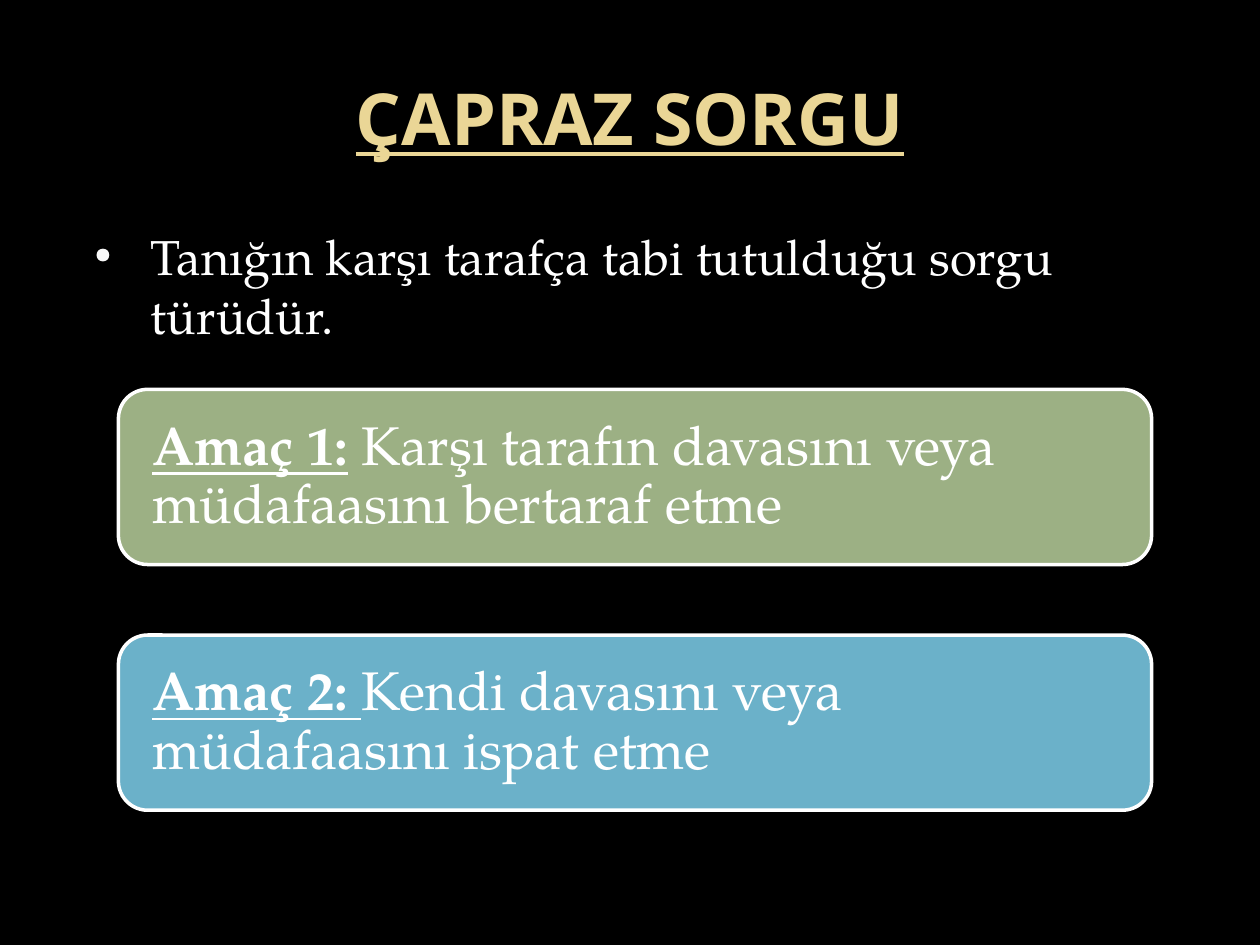
from lxml.etree import SubElement
from pptx import Presentation
from pptx.dml.color import RGBColor
from pptx.enum.shapes import MSO_SHAPE
from pptx.enum.text import MSO_ANCHOR, PP_ALIGN
from pptx.oxml.ns import qn
from pptx.util import Inches, Pt

W, H = 10, 7.5
SERIF = "TeX Gyre Pagella"
TITLE = [("ÇAPRAZ SORGU", dict(name="Noto Sans", size=Pt(41), bold=True, underline=True), "EAD696")]
BODY = [("Tanığın karşı tarafça tabi tutulduğu sorgu türüdür.", dict(name=SERIF, size=Pt(28)), "FFFFFF")]
PLAIN = dict(name=SERIF, size=Pt(31))
LABEL = dict(PLAIN, bold=True, underline=True)
AIMS = [
    ("9CB084", "Amaç 1:", " Karşı tarafın davasını veya müdafaasını bertaraf etme"),
    ("6BB1C9", "Amaç 2: ", "Kendi davasını veya müdafaasını ispat etme"),
]
MARGIN = 0.05 * W
CARD = dict(left=0.94, top=3.09, width=0.82 * W, height=1.39, pitch=1.95, inset=0.2)


def rgb(value):
    """Turn a hex string into a colour."""
    return RGBColor.from_string(value)


def write(shape, runs, anchor=MSO_ANCHOR.TOP):
    """Fill a shape with one paragraph of formatted runs."""
    tf = shape.text_frame
    tf.word_wrap = True
    tf.vertical_anchor = anchor
    p = tf.paragraphs[0]
    for text, font, color in runs:
        r = p.add_run()
        r.text = text
        for key, value in font.items():
            setattr(r.font, key, value)
        r.font.color.rgb = rgb(color)
    return p


def add_bullet(p, char, color, percent, indent, hang):
    """Give a paragraph a coloured bullet with a hanging indent."""
    pPr = p._p.get_or_add_pPr()
    pPr.set("marL", str(Inches(indent)))
    pPr.set("indent", str(-Inches(hang)))
    SubElement(SubElement(pPr, qn("a:buClr")), qn("a:srgbClr"), val=color)
    SubElement(pPr, qn("a:buSzPct"), val=str(percent * 1000))
    SubElement(pPr, qn("a:buFont"), typeface=SERIF)
    SubElement(pPr, qn("a:buChar"), char=char)


def add_text(s, top, height, runs, anchor=MSO_ANCHOR.TOP):
    """Add a text box between the slide margins."""
    box = s.shapes.add_textbox(Inches(MARGIN), Inches(top), Inches(W - 2 * MARGIN), Inches(height))
    return write(box, runs, anchor)


def add_card(s, row, fill, label, text):
    """Add one rounded card for an aim."""
    top = CARD["top"] + row * CARD["pitch"]
    sp = s.shapes.add_shape(MSO_SHAPE.ROUNDED_RECTANGLE, Inches(CARD["left"]), Inches(top),
                            Inches(CARD["width"]), Inches(CARD["height"]))
    sp.shadow.inherit = False
    sp.fill.solid()
    sp.fill.fore_color.rgb = rgb(fill)
    sp.line.color.rgb = rgb("FFFFFF")
    sp.line.width = Pt(2)
    for side in ("left", "right", "top", "bottom"):
        inset = CARD["inset"] if side in ("left", "right") else CARD["inset"] / 2
        setattr(sp.text_frame, f"margin_{side}", Inches(inset))
    p = write(sp, [(label, LABEL, "FFFFFF"), (text, PLAIN, "FFFFFF")], MSO_ANCHOR.MIDDLE)
    p.alignment = PP_ALIGN.LEFT
    p.line_spacing = 0.9


def main():
    """Build the slide and save it."""
    prs = Presentation()
    prs.slide_width, prs.slide_height = Inches(W), Inches(H)
    s = prs.slides.add_slide(prs.slide_layouts[6])
    s.background.fill.solid()
    s.background.fill.fore_color.rgb = rgb("000000")
    add_text(s, 0.3, 1.25, TITLE, MSO_ANCHOR.MIDDLE).alignment = PP_ALIGN.CENTER
    add_bullet(add_text(s, 1.75, 1.2, BODY), "•", "F9F9F9", 65, 0.6, 0.45)
    for row, aim in enumerate(AIMS):
        add_card(s, row, *aim)
    prs.save("out.pptx")


if __name__ == "__main__":
    main()
